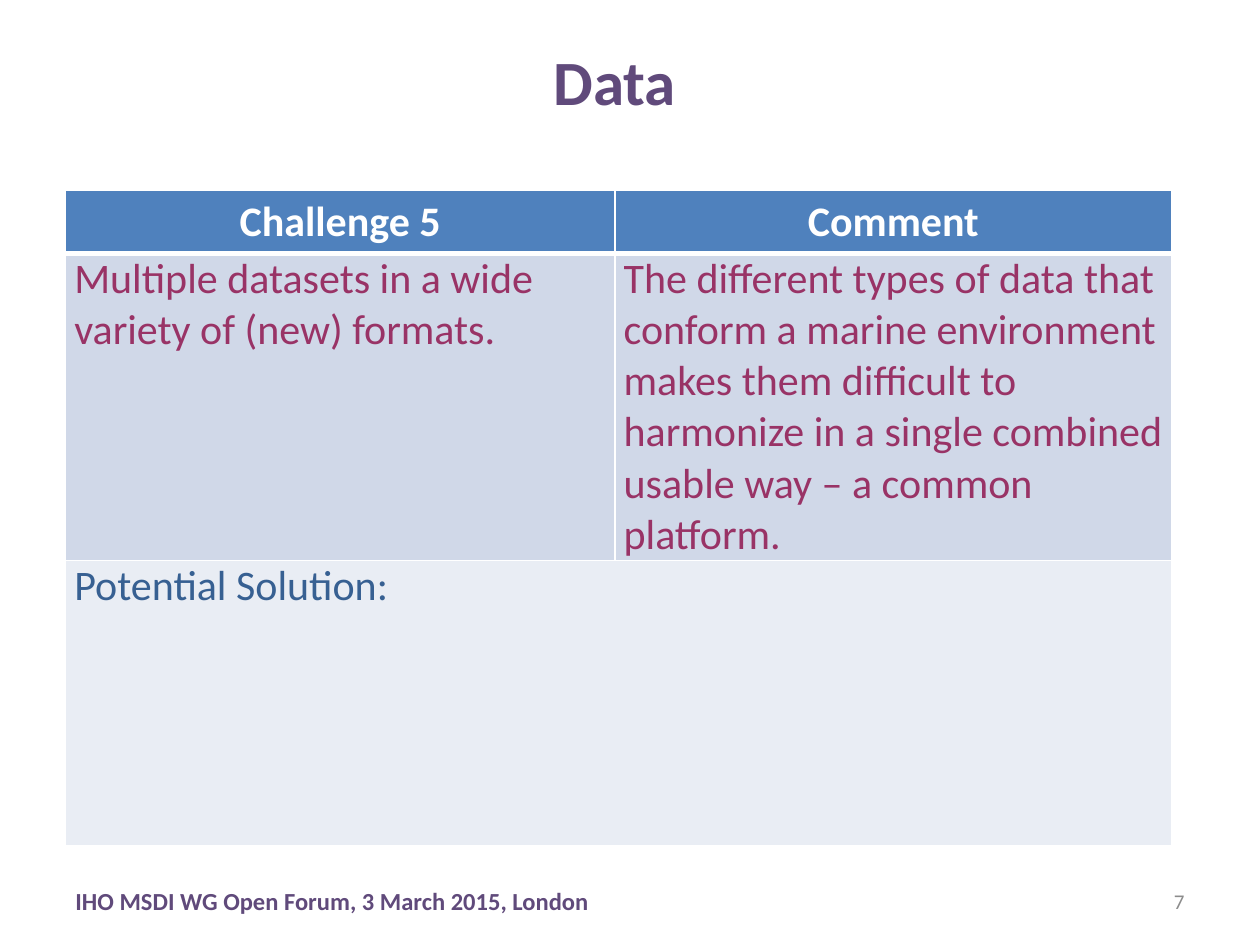
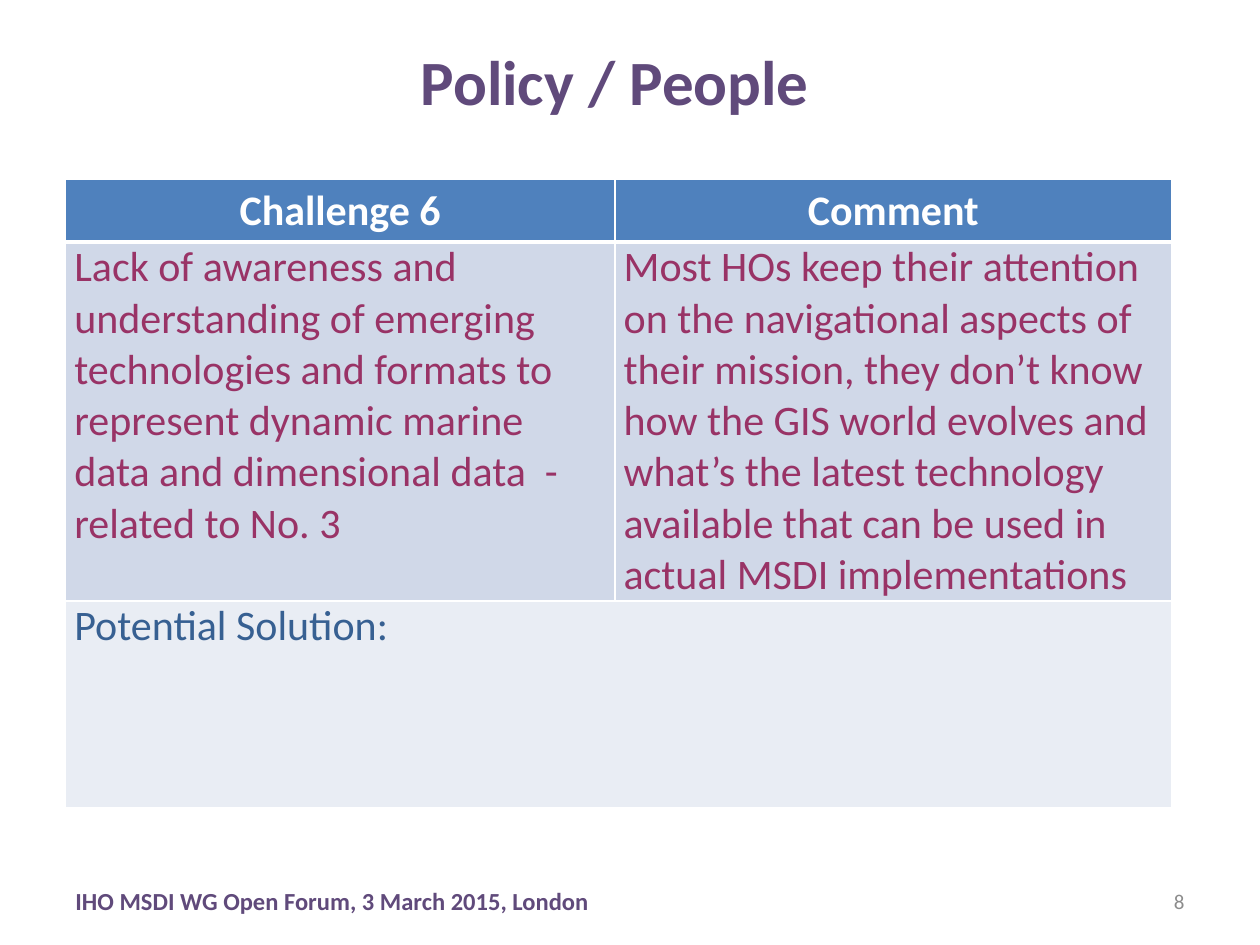
from lxml.etree import SubElement
from pptx import Presentation
from pptx.dml.color import RGBColor
from pptx.enum.text import MSO_ANCHOR as Anchor, PP_ALIGN as Align
from pptx.oxml.ns import qn
from pptx.util import Inches, Pt

PURPLE = RGBColor(0x60, 0x4A, 0x7B)
GRAY = RGBColor(0x8C, 0x8C, 0x8C)
WHITE = RGBColor(0xFF, 0xFF, 0xFF)
PLUM = RGBColor(0x99, 0x33, 0x66)
NAVY = RGBColor(0x37, 0x60, 0x92)
HEADER_BLUE = RGBColor(0x4F, 0x81, 0xBD)
BODY_BLUE = RGBColor(0xD0, 0xD8, 0xE8)
SOLUTION_BLUE = RGBColor(0xE9, 0xED, 0xF4)

FONT = "Calibri"
FOOTER = "IHO MSDI WG Open Forum, 3 March 2015, London"
COLUMN_WIDTHS = (4.36, 4.42)

CHALLENGES = [
    {
        "title": "Data",
        "page": 7,
        "top": 1.51,
        "row_heights": (0.48, 2.44, 2.26),
        "challenge": "Multiple datasets in a wide variety of (new) formats.",
        "comment": "The different types of data that conform a marine environment makes them "
                   "difficult to harmonize in a single combined usable way – a common platform.",
        "number": 5,
    },
    {
        "title": "Policy / People",
        "page": 8,
        "top": 1.42,
        "row_heights": (0.48, 2.85, 1.64),
        "challenge": "Lack of awareness and understanding of emerging technologies and formats to "
                     "represent dynamic marine data and dimensional data  - related to No. 3",
        "comment": "Most HOs keep their attention on the navigational aspects of their mission, "
                   "they don’t know how the GIS world evolves and what’s the latest technology "
                   "available that can be used in actual MSDI implementations",
        "number": 6,
    },
]


def write_text(frame, text, size=24, color=PLUM, bold=False, align=Align.LEFT):
    frame.word_wrap = True
    paragraph = frame.paragraphs[0]
    paragraph.alignment = align
    run = paragraph.add_run()
    run.text = text
    run.font.name = FONT
    run.font.size = Pt(size)
    run.font.bold = bold
    run.font.color.rgb = color


def style_cell(cell, fill, bottom_width=1):
    properties = cell._tc.get_or_add_tcPr()
    for side, width in (("L", 1), ("R", 1), ("T", 1), ("B", bottom_width)):
        line = SubElement(properties, qn(f"a:ln{side}"), w=str(Pt(width)))
        line_fill = SubElement(line, qn("a:solidFill"))
        SubElement(line_fill, qn("a:srgbClr"), val=str(WHITE))
    cell.fill.solid()
    cell.fill.fore_color.rgb = fill


presentation = Presentation()
presentation.slide_width = Inches(10)
presentation.slide_height = Inches(7.5)

for content in CHALLENGES:
    slide = presentation.slides.add_slide(presentation.slide_layouts[6])

    labels = [
        (FOOTER, (0.5, 6.95, 6.08, 0.4), dict(size=14, color=PURPLE, bold=True)),
        (str(content["page"]), (7.17, 6.95, 2.33, 0.4), dict(size=12, color=GRAY, align=Align.RIGHT)),
        (content["title"], (2.53, 0.09, 4.7, 1.09),
         dict(size=36, color=PURPLE, bold=True, align=Align.CENTER)),
    ]
    for text, position, text_format in labels:
        frame = slide.shapes.add_textbox(*map(Inches, position)).text_frame
        frame.vertical_anchor = Anchor.MIDDLE
        write_text(frame, text, **text_format)

    table = slide.shapes.add_table(
        3, 2, Inches(0.52), Inches(content["top"]),
        Inches(sum(COLUMN_WIDTHS)), Inches(sum(content["row_heights"]))).table
    for column, width in zip(table.columns, COLUMN_WIDTHS):
        column.width = Inches(width)
    for row, height in zip(table.rows, content["row_heights"]):
        row.height = Inches(height)
    table.cell(2, 0).merge(table.cell(2, 1))

    headings = (f"Challenge {content['number']}", "Comment")
    details = (content["challenge"], content["comment"])
    for index, (heading, detail) in enumerate(zip(headings, details)):
        header_cell, body_cell, solution_cell = (table.cell(row, index) for row in range(3))
        write_text(header_cell.text_frame, heading, color=WHITE, bold=True, align=Align.CENTER)
        write_text(body_cell.text_frame, detail)
        style_cell(header_cell, HEADER_BLUE, bottom_width=3)
        style_cell(body_cell, BODY_BLUE)
        style_cell(solution_cell, SOLUTION_BLUE)
        for cell in (body_cell, solution_cell):
            cell.margin_left = cell.margin_right = Inches(0.07)
            cell.margin_top = cell.margin_bottom = 0
    write_text(table.cell(2, 0).text_frame, "Potential Solution:", color=NAVY)

presentation.save("out.pptx")
